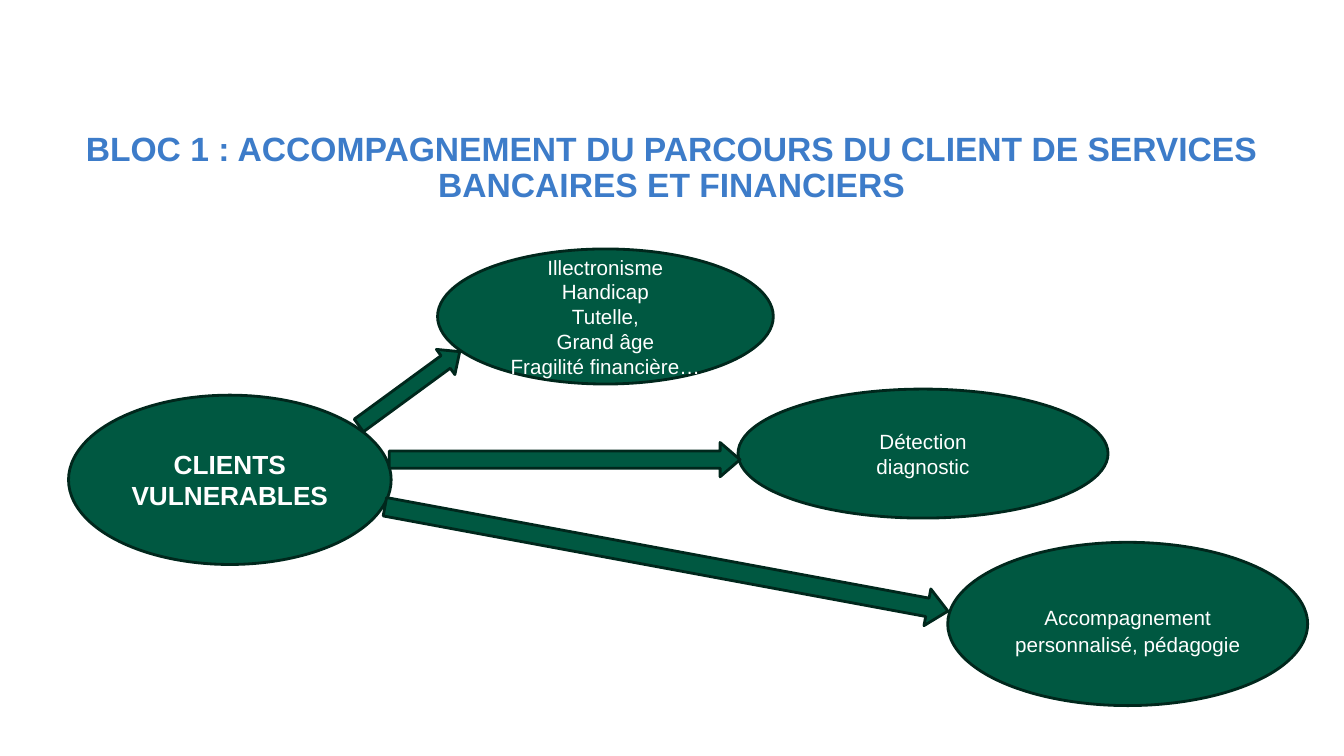
"""Build the slide on support for vulnerable banking clients."""
from dataclasses import dataclass

from pptx import Presentation
from pptx.dml.color import RGBColor
from pptx.enum.shapes import MSO_SHAPE
from pptx.enum.text import MSO_ANCHOR, MSO_AUTO_SIZE, PP_ALIGN
from pptx.util import Inches, Pt

OVAL, ARROW = MSO_SHAPE.OVAL, MSO_SHAPE.RIGHT_ARROW
CENTER = PP_ALIGN.CENTER
TOP, MIDDLE = MSO_ANCHOR.TOP, MSO_ANCHOR.MIDDLE
NO_FIT = MSO_AUTO_SIZE.NONE
FONT = "Arial"
BLUE, GREEN, DARK, WHITE = "3D7CC9", "005841", "00271C", "FFFFFF"
WIDE_SPACE = 24


@dataclass
class Bubble:
    box: tuple[float, float, float, float]
    paragraphs: tuple[tuple[str, ...], ...]
    size: float = 14.7
    bold: bool = False


@dataclass
class Arrow:
    box: tuple[float, float, float, float]
    head: float
    rotation: float = 0


BUBBLES = [
    Bubble((0.68, 3.92, 3.2, 1.68), (("CLIENTS VULNERABLES",),), 18.7, True),
    Bubble((4.34, 2.47, 3.33, 1.34), (
        ("Illectronisme",), ("Handicap",), ("Tutelle,",), ("Grand âge",),
        ("Fragilité financière…",))),
    Bubble((9.4, 5.38, 3.57, 1.62),
           (("Accompagnement", " ", "personnalisé, pédagogie"),)),
    Bubble((7.32, 3.86, 3.67, 1.28), (("Détection",), ("diagnostic",))),
]
ARROWS = [
    Arrow((3.44, 3.7, 1.24, 0.31), 0.56, 323.8),
    Arrow((3.86, 4.39, 3.48, 0.34), 0.58),
    Arrow((3.77, 5.36, 5.68, 0.37), 0.56, 10.5),
]


def rgb(value: str) -> RGBColor:
    return RGBColor.from_string(value)


def style(p, size: float, color: str, bold: bool) -> None:
    p.alignment = CENTER
    p.font.name = FONT
    p.font.size = Pt(size)
    p.font.bold = bold
    p.font.color.rgb = rgb(color)


def add_green(s, kind, box: tuple[float, float, float, float]):
    sp = s.shapes.add_shape(kind, *map(Inches, box))
    sp.shadow.inherit = False
    sp.fill.solid()
    sp.fill.fore_color.rgb = rgb(GREEN)
    sp.line.color.rgb = rgb(DARK)
    sp.line.width = Pt(2)
    return sp


def add_bubble(s, bubble: Bubble) -> None:
    tf = add_green(s, OVAL, bubble.box).text_frame
    tf.word_wrap = True
    tf.vertical_anchor = MIDDLE
    for i, texts in enumerate(bubble.paragraphs):
        p = tf.add_paragraph() if i else tf.paragraphs[0]
        style(p, bubble.size, WHITE, bubble.bold)
        for text in texts:
            r = p.add_run()
            r.text = text
            if text == " ":
                r.font.size = Pt(WIDE_SPACE)


def add_arrow(s, arrow: Arrow) -> None:
    sp = add_green(s, ARROW, arrow.box)
    sp.adjustments[0] = 0.5
    sp.adjustments[1] = arrow.head
    sp.rotation = arrow.rotation


def set_title(s, text: str) -> None:
    title = s.shapes.title
    title.left, title.top = Inches(0.52), Inches(1.31)
    title.width, title.height = Inches(12.28), Inches(1.05)
    tf = title.text_frame
    tf.text = text
    tf.word_wrap = True
    tf.auto_size = NO_FIT
    tf.vertical_anchor = TOP
    tf.margin_left = tf.margin_right = tf.margin_top = tf.margin_bottom = 0
    p = tf.paragraphs[0]
    p.line_spacing = 0.9
    style(p, 24, BLUE, True)


def main() -> None:
    prs = Presentation()
    prs.slide_width, prs.slide_height = Inches(13.33), Inches(7.5)
    s = prs.slides.add_slide(prs.slide_layouts[5])
    set_title(s, "BLOC 1 : ACCOMPAGNEMENT DU PARCOURS DU CLIENT "
                 "DE SERVICES BANCAIRES ET FINANCIERS")
    for bubble in BUBBLES:
        add_bubble(s, bubble)
    for arrow in ARROWS:
        add_arrow(s, arrow)
    prs.save("out.pptx")


if __name__ == "__main__":
    main()
